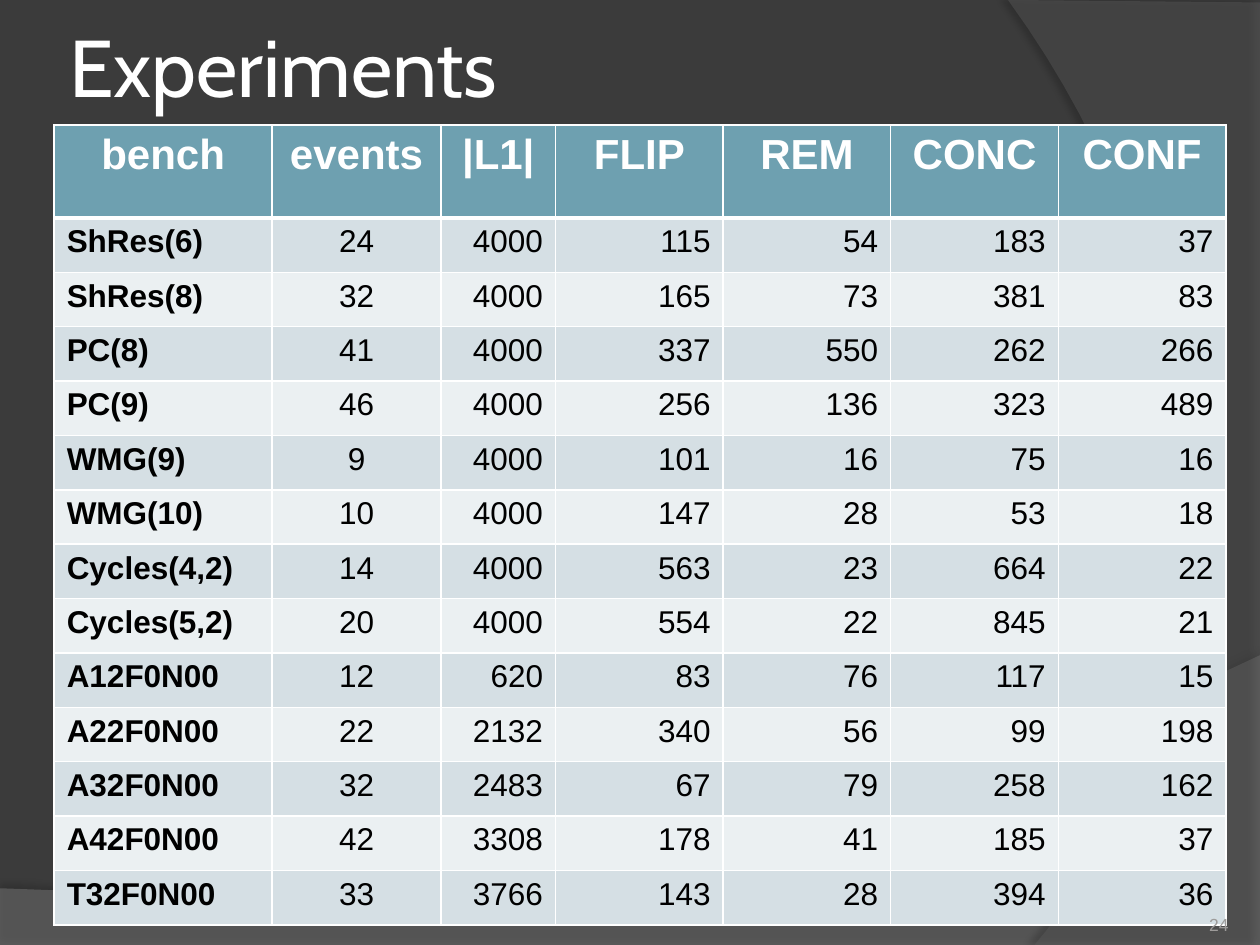
import pptx
import pptx.dml.color
import pptx.enum.text
import pptx.oxml
import pptx.oxml.ns
import pptx.util

Inches = pptx.util.Inches
Pt = pptx.util.Pt
RGB = pptx.dml.color.RGBColor.from_string
ALIGN = pptx.enum.text.PP_ALIGN
ANCHOR = pptx.enum.text.MSO_ANCHOR
NAMESPACE = pptx.oxml.ns.nsdecls("a")

COLORS = {
    "background": "3B3B3B", "lower wave": "7F7F7F", "right wave": "5E5E5E",
    "white": "FFFFFF", "black": "000000", "header": "6EA0B0",
    "odd row": "D5DFE4", "even row": "EBF0F2", "page number": "9D9B9A",
}


def write(frame, text, align, size, font, color, bold=False):
    para = frame.paragraphs[0]
    para.alignment = align
    span = para.add_run()
    span.text = text
    for name, value in {"size": Pt(size), "name": font, "bold": bold}.items():
        setattr(span.font, name, value)
    span.font.color.rgb = RGB(COLORS[color])


def curve(start, control_1, control_2, end, steps=40):
    """Points along a cubic curve, without its start."""
    points = []
    for step in range(1, steps + 1):
        t = step / steps
        weights = ((1 - t) ** 3, 3 * t * (1 - t) ** 2, 3 * t ** 2 * (1 - t), t ** 3)
        points.append(tuple(
            sum(w * c for w, c in zip(weights, axis))
            for axis in zip(start, control_1, control_2, end)))
    return points


deck = pptx.Presentation()
deck.slide_width, deck.slide_height = Inches(10), Inches(7.5)
page = deck.slides.add_slide(deck.slide_layouts[6])
page.background.fill.solid()
page.background.fill.fore_color.rgb = RGB(COLORS["background"])

# Background waves: colour, opacity, shadow (opacity, distance, direction), outline
waves = [
    ("lower wave", 45, (35, 3.5, 270),
     [(0, 7.05), (0, 7.51), (10, 7.51), (10, 5.2)]
     + curve((10, 5.2), (5.59, 7.29), (3.91, 7.19), (0, 7.05))),
    ("right wave", 40, (45, 4, 180),
     [(10, 0.02), (10, 7.5), (8.21, 7.5)]
     + curve((8.21, 7.5), (9.35, 6.19), (10.18, 3), (8, 0))),
]
for color, opacity, (shade, distance, direction), outline in waves:
    points = [(Inches(x), Inches(y)) for x, y in outline]
    builder = page.shapes.build_freeform(*points[0])
    builder.add_line_segments(points[1:], close=True)
    wave = builder.convert_to_shape()
    wave.fill.solid()
    wave.fill.fore_color.rgb = RGB(COLORS[color])
    wave.line.fill.background()
    fill_color = wave.fill._xPr.find(".//" + pptx.oxml.ns.qn("a:srgbClr"))
    fill_color.append(pptx.oxml.parse_xml(
        f'<a:alpha {NAMESPACE} val="{opacity * 1000}"/>'))
    wave.element.spPr.append(pptx.oxml.parse_xml(
        f'<a:effectLst {NAMESPACE}><a:outerShdw blurRad="{Pt(4)}" '
        f'dist="{Pt(distance)}" dir="{direction * 60000}" algn="ctr" '
        f'rotWithShape="0"><a:srgbClr val="{COLORS["black"]}">'
        f'<a:alpha val="{shade * 1000}"/></a:srgbClr></a:outerShdw></a:effectLst>'))

# Title
title = page.shapes.add_textbox(Inches(0.5), Inches(-0.11), Inches(8.17), Inches(1.25))
margins = dict.fromkeys(
    ("margin_left", "margin_top", "margin_right", "margin_bottom"), Inches(0.05))
for name, value in {**margins, "word_wrap": True,
                    "vertical_anchor": ANCHOR.MIDDLE}.items():
    setattr(title.text_frame, name, value)
write(title.text_frame, "Experiments", ALIGN.LEFT, 46, "Cabin", "white")

# Results table
headings = ["bench", "events", "|L1|", "FLIP", "REM", "CONC", "CONF"]
results = [
    ("ShRes(6)", 24, 4000, 115, 54, 183, 37),
    ("ShRes(8)", 32, 4000, 165, 73, 381, 83),
    ("PC(8)", 41, 4000, 337, 550, 262, 266),
    ("PC(9)", 46, 4000, 256, 136, 323, 489),
    ("WMG(9)", 9, 4000, 101, 16, 75, 16),
    ("WMG(10)", 10, 4000, 147, 28, 53, 18),
    ("Cycles(4,2)", 14, 4000, 563, 23, 664, 22),
    ("Cycles(5,2)", 20, 4000, 554, 22, 845, 21),
    ("A12F0N00", 12, 620, 83, 76, 117, 15),
    ("A22F0N00", 22, 2132, 340, 56, 99, 198),
    ("A32F0N00", 32, 2483, 67, 79, 258, 162),
    ("A42F0N00", 42, 3308, 178, 41, 185, 37),
    ("T32F0N00", 33, 3766, 143, 28, 394, 36),
]
rows = [headings] + results
column_widths = [1.73, 1.34, 0.91] + [1.33] * 4
column_aligns = [ALIGN.LEFT, ALIGN.CENTER] + [ALIGN.RIGHT] * 5
table_height, header_height = 6.35, 0.74
body_height = (table_height - header_height) / len(results)

table = page.shapes.add_table(
    len(rows), len(headings), Inches(0.43), Inches(0.99),
    Inches(sum(column_widths)), Inches(table_height)).table
for column, width in zip(table.columns, column_widths):
    column.width = Inches(width)

for r, values in enumerate(rows):
    is_header = r == 0
    table.rows[r].height = Inches(header_height if is_header else body_height)
    row_color = "header" if is_header else "odd row" if r % 2 else "even row"
    borders = {"L": 1, "R": 1, "T": 3 if r == 1 else 1, "B": 3 if is_header else 1}
    for c, value in enumerate(values):
        cell = table.cell(r, c)
        properties = cell._tc.get_or_add_tcPr()
        for side, width in borders.items():
            properties.append(pptx.oxml.parse_xml(
                f'<a:ln{side} {NAMESPACE} w="{Pt(width)}"><a:solidFill>'
                f'<a:srgbClr val="{COLORS["white"]}"/></a:solidFill></a:ln{side}>'))
        cell.fill.solid()
        cell.fill.fore_color.rgb = RGB(COLORS[row_color])
        write(cell.text_frame, str(value),
              ALIGN.CENTER if is_header else column_aligns[c],
              24 if is_header else 18, "Arial",
              "white" if is_header else "black", is_header or c == 0)

# Page number
number = page.shapes.add_textbox(Inches(8.92), Inches(7.02), Inches(0.83), Inches(0.4))
for name, value in {**dict.fromkeys(margins, 0), "word_wrap": True,
                    "vertical_anchor": ANCHOR.BOTTOM}.items():
    setattr(number.text_frame, name, value)
write(number.text_frame, "24", ALIGN.RIGHT, 10, "Arial", "page number")

deck.save("out.pptx")
